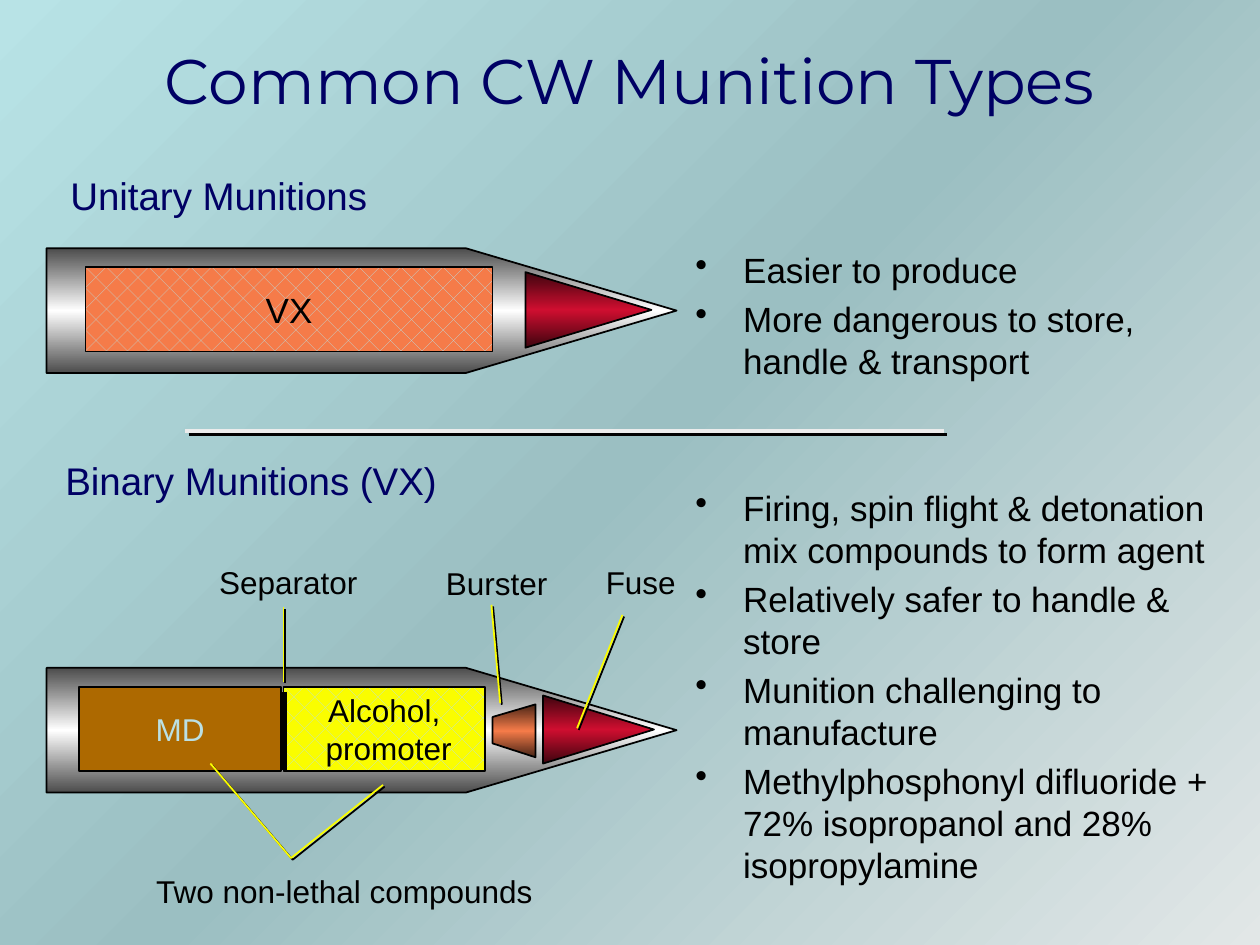
from copy import deepcopy

from lxml import etree
from pptx import Presentation
from pptx.dml.color import RGBColor
from pptx.enum.dml import MSO_PATTERN
from pptx.enum.shapes import MSO_CONNECTOR, MSO_SHAPE
from pptx.enum.text import MSO_ANCHOR, PP_ALIGN
from pptx.oxml.ns import qn
from pptx.util import Inches, Pt

PENTAGON, TRIANGLE, RECTANGLE = MSO_SHAPE.PENTAGON, MSO_SHAPE.ISOSCELES_TRIANGLE, MSO_SHAPE.RECTANGLE
STRAIGHT = MSO_CONNECTOR.STRAIGHT
DIAMONDS = MSO_PATTERN.DOTTED_DIAMOND
LEFT, CENTER = PP_ALIGN.LEFT, PP_ALIGN.CENTER
TOP, MIDDLE = MSO_ANCHOR.TOP, MSO_ANCHOR.MIDDLE

BLACK = RGBColor(0x00, 0x00, 0x00)
WHITE = RGBColor(0xFF, 0xFF, 0xFF)
NAVY = RGBColor(0x00, 0x00, 0x64)
STEEL = RGBColor(0x4C, 0x4C, 0x4C)
MAROON = RGBColor(0x3E, 0x04, 0x0E)
RED = RGBColor(0xCF, 0x0E, 0x30)
RUST = RGBColor(0x49, 0x25, 0x16)
ORANGE = RGBColor(0xF5, 0x7B, 0x49)
YELLOW = RGBColor(0xFA, 0xFD, 0x00)
BROWN = RGBColor(0xAD, 0x69, 0x00)
PALE_BLUE = RGBColor(0xBB, 0xE0, 0xE3)
PALE_GRAY = RGBColor(0xEC, 0xEC, 0xEC)
BACKDROP = [RGBColor(0xB8, 0xE3, 0xE6), RGBColor(0x9B, 0xBF, 0xC2), RGBColor(0xE2, 0xE7, 0xE7)]


class MunitionSlide:
    font = "Arial"

    def __init__(self, slide):
        self.slide = slide
        self.shapes = slide.shapes

    def start_group(self):
        self.shapes = self.slide.shapes.add_group_shape().shapes

    def end_group(self):
        self.shapes = self.slide.shapes

    def gradient(self, fill, element, colors, angle):
        fill.gradient()
        fill.gradient_angle = angle
        stops = element.find(".//" + qn("a:gsLst"))
        stops.insert(1, deepcopy(stops[0]))
        for stop, color, position in zip(fill.gradient_stops, colors, (0, 0.5, 1)):
            stop.color.rgb = color
            stop.position = position

    def background(self, colors):
        self.gradient(self.slide.background.fill, self.slide.element, colors, 315)

    def fill_text(self, frame, lines, size, color, align=LEFT, anchor=TOP, font=None, wrap=False):
        frame.word_wrap = wrap
        frame.vertical_anchor = anchor
        frame.text = "\n".join(lines)
        for paragraph in frame.paragraphs:
            paragraph.alignment = align
            paragraph.font.size = Pt(size)
            paragraph.font.name = font or self.font
            paragraph.font.color.rgb = color

    def text(self, place, line, size, color=BLACK, **style):
        box = self.shapes.add_textbox(*map(Inches, place))
        self.fill_text(box.text_frame, [line], size, color, **style)

    def bullets(self, place, points):
        frame = self.shapes.add_textbox(*map(Inches, place)).text_frame
        frame.word_wrap = True
        for index, (point, space) in enumerate(points):
            paragraph = frame.add_paragraph() if index else frame.paragraphs[0]
            paragraph.text = point
            paragraph.space_before = Pt(space)
            properties = paragraph._p.get_or_add_pPr()
            properties.set("marL", str(Inches(0.38)))
            properties.set("indent", str(-Inches(0.38)))
            etree.SubElement(properties, qn("a:buChar"), char="•")
            paragraph.font.size = Pt(20)
            paragraph.font.name = self.font
            paragraph.font.color.rgb = BLACK

    def outline(self, shape):
        shape.shadow.inherit = False
        shape.line.color.rgb = BLACK
        shape.line.width = Pt(1)

    def shaded(self, kind, place, edge, middle, angle=90, rotation=0):
        shape = self.shapes.add_shape(kind, *map(Inches, place))
        shape.rotation = rotation
        self.gradient(shape.fill, shape._element, [edge, middle, edge], angle)
        self.outline(shape)
        return shape

    def shell(self, top):
        body = self.shaded(PENTAGON, (0.37, top, 5, 0.99), STEEL, WHITE)
        body.adjustments[0] = 1.689

    def fuse(self, place):
        self.shaded(TRIANGLE, place, MAROON, RED, angle=0, rotation=90)

    def chamber(self, place, lines, size, color, text_color=BLACK, patterned=True):
        shape = self.shapes.add_shape(RECTANGLE, *map(Inches, place))
        if patterned:
            shape.fill.patterned()
            shape.fill.pattern = DIAMONDS
            shape.fill.fore_color.rgb = PALE_BLUE
            shape.fill.back_color.rgb = color
        else:
            shape.fill.solid()
            shape.fill.fore_color.rgb = color
        self.outline(shape)
        self.fill_text(shape.text_frame, lines, size, text_color, CENTER, MIDDLE)

    def polyline(self, points, close):
        start, *rest = [(Inches(x), Inches(y)) for x, y in points]
        builder = self.shapes.build_freeform(*start)
        builder.add_line_segments(rest, close=close)
        shape = builder.convert_to_shape()
        self.outline(shape)
        return shape

    def burster(self, points):
        shape = self.polyline(points, True)
        self.gradient(shape.fill, shape._element, [RUST, ORANGE, RUST], 90)

    def drop_shadow(self, effects, distance):
        shadow = etree.SubElement(effects, qn("a:outerShdw"), dist=str(Pt(distance)),
                                  dir="2700000", algn="ctr", rotWithShape="0")
        etree.SubElement(shadow, qn("a:srgbClr"), val=str(BLACK))

    def line(self, start, end, color=YELLOW, width=1, shadow=1.4):
        connector = self.shapes.add_connector(STRAIGHT, *map(Inches, (*start, *end)))
        connector.line.color.rgb = color
        connector.line.width = Pt(width)
        effects = etree.SubElement(connector._element.spPr, qn("a:effectLst"))
        if shadow:
            self.drop_shadow(effects, shadow)

    def bracket(self, points):
        shape = self.polyline(points, False)
        shape.fill.background()
        shape.line.color.rgb = YELLOW
        self.drop_shadow(shape._element.spPr.find(qn("a:effectLst")), 1.4)


def main():
    deck = Presentation()
    deck.slide_width, deck.slide_height = Inches(10), Inches(7.5)
    page = MunitionSlide(deck.slides.add_slide(deck.slide_layouts[6]))
    page.background(BACKDROP)

    page.text((0.23, 0.25, 9.54, 0.76), "Common CW Munition Types", 36, NAVY,
              align=CENTER, anchor=MIDDLE, font="Montserrat", wrap=True)
    page.text((0.46, 1.32, 2.59, 0.47), "Unitary Munitions", 22, NAVY)
    page.text((0.42, 3.58, 3.19, 0.47), "Binary Munitions (VX)", 22, NAVY)

    page.start_group()
    page.shell(1.97)
    page.fuse((4.37, 1.96, 0.6, 1))
    page.chamber((0.68, 2.12, 3.23, 0.67), ["VX"], 20, ORANGE)
    page.end_group()

    page.bullets((5.42, 1.92, 4.56, 5.35), [
        ("Easier to produce", 0),
        ("More dangerous to store, handle & transport", 4),
        ("Firing, spin flight & detonation mix compounds to form agent", 60),
        ("Relatively safer to handle & store", 4),
        ("Munition challenging to manufacture", 4),
        ("Methylphosphonyl difluoride + 72% isopropanol and 28% isopropylamine", 4),
    ])

    page.start_group()
    page.shell(5.3)
    page.fuse((4.48, 5.35, 0.54, 0.88))
    page.chamber((2.25, 5.45, 1.6, 0.67), ["Alcohol,", " promoter"], 18, YELLOW)
    page.chamber((0.63, 5.45, 1.6, 0.67), ["MD"], 18, BROWN, PALE_BLUE, patterned=False)
    page.line((2.25, 5.49), (2.25, 6.11), BLACK, 4, shadow=0)
    page.burster([(4.25, 5.59), (3.91, 5.69), (3.91, 5.9), (4.25, 6.01)])
    page.end_group()

    for place, label in [
        ((1.14, 6.87, 3.22, 0.4), "Two non-lethal compounds"),
        ((1.64, 4.42, 1.31, 0.4), "Separator"),
        ((4.71, 4.42, 0.76, 0.4), "Fuse"),
        ((3.44, 4.43, 1.01, 0.4), "Burster"),
    ]:
        page.text(place, label, 18)

    page.line((1.47, 3.42), (7.49, 3.42), PALE_GRAY, 2, shadow=2.8)
    page.bracket([(3.04, 6.23), (2.31, 6.81), (1.67, 6.06)])
    for start, end in [
        ((2.25, 4.82), (2.25, 5.41)),
        ((3.9, 4.8), (3.97, 5.58)),
        ((4.94, 4.88), (4.58, 5.78)),
    ]:
        page.line(start, end)

    deck.save("out.pptx")


if __name__ == "__main__":
    main()
